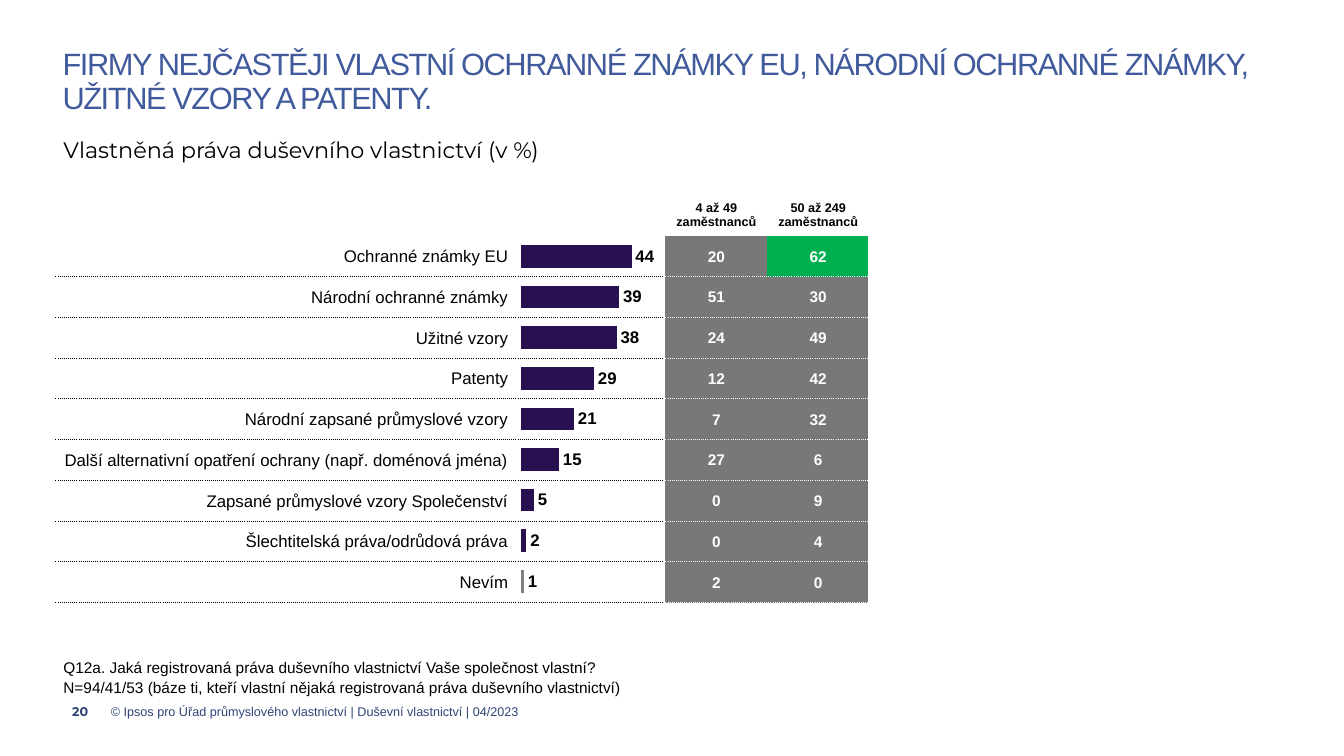
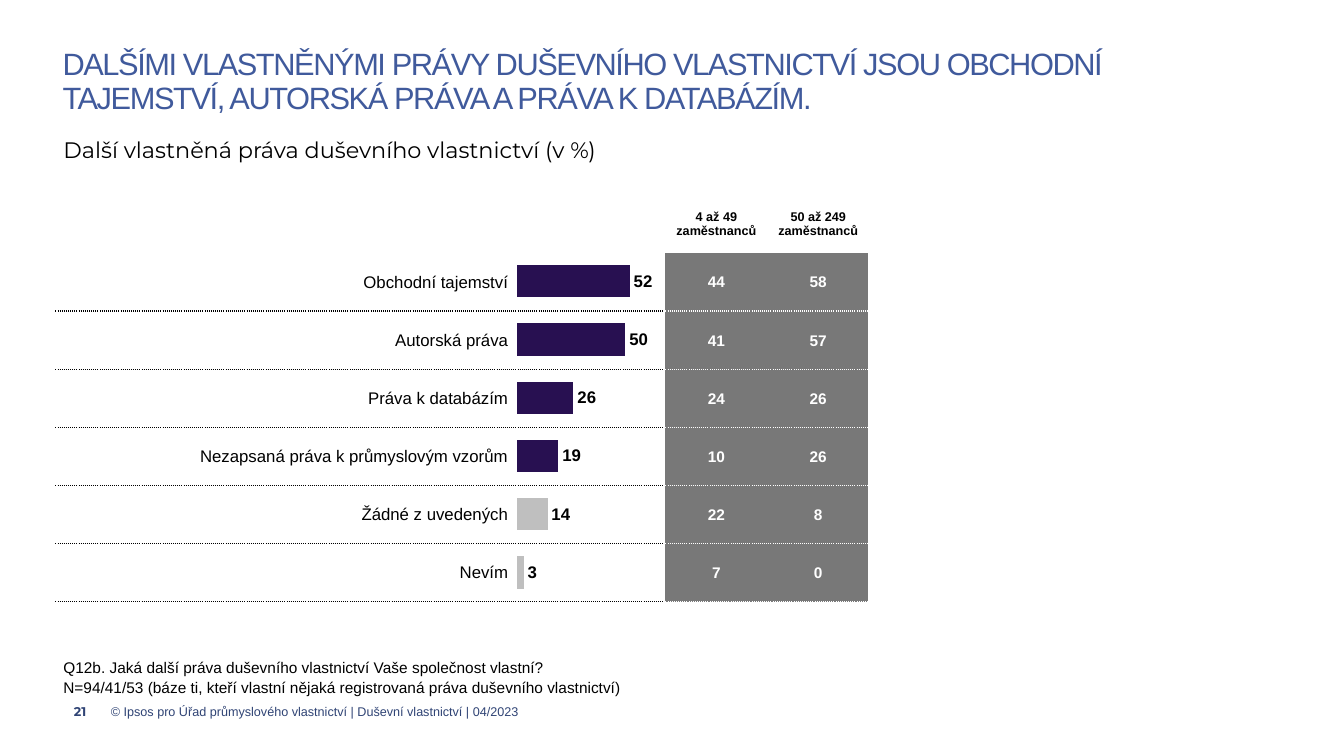
from lxml.etree import SubElement
from pptx import Presentation
from pptx.chart.data import CategoryChartData
from pptx.dml.color import RGBColor
from pptx.enum.chart import XL_CHART_TYPE as CHART, XL_LABEL_POSITION as LABEL
from pptx.enum.text import MSO_ANCHOR as ANCHOR, PP_ALIGN as ALIGN
from pptx.oxml.ns import qn
from pptx.util import Emu, Pt

EMU_PER_PX = 9144
SANS, DISPLAY = "Arial", "Montserrat"
BLACK, WHITE = "000000", "FFFFFF"
TITLE_BLUE, FOOTER_BLUE = "405A9C", "304475"
BAR, CELL_GRAY, HIGHLIGHT = "281051", "787878", "00B050"
NO_TABLE_STYLE = "{2D5ABB26-0587-4C30-8999-92F81FD0307C}"
TABLE_LEFT, TABLE_TOP = 55, 192
COLUMNS = [450, 155, 101, 101]
GROUPS = ["4 až 49 zaměstnanců", "50 až 249 zaměstnanců"]
BASE = "N=94/41/53 (báze ti, kteří vlastní nějaká registrovaná práva duševního vlastnictví)"
COPYRIGHT = "© Ipsos pro Úřad průmyslového vlastnictví | Duševní vlastnictví | 04/2023"

SLIDES = [
    {
        "number": "20",
        "title": "FIRMY NEJČASTĚJI VLASTNÍ OCHRANNÉ ZNÁMKY EU, NÁRODNÍ OCHRANNÉ ZNÁMKY, "
                 "UŽITNÉ VZORY A PATENTY.",
        "subtitle": "Vlastněná práva duševního vlastnictví (v %)",
        "question": "Q12a. Jaká registrovaná práva duševního vlastnictví Vaše společnost vlastní?",
        "rows": [
            ("Ochranné známky EU", 44, 20, 62),
            ("Národní ochranné známky", 39, 51, 30),
            ("Užitné vzory", 38, 24, 49),
            ("Patenty", 29, 12, 42),
            ("Národní zapsané průmyslové vzory", 21, 7, 32),
            ("Další alternativní opatření ochrany (např. doménová jména)", 15, 27, 6),
            ("Zapsané průmyslové vzory Společenství", 5, 0, 9),
            ("Šlechtitelská práva/odrůdová práva", 2, 0, 4),
            ("Nevím", 1, 2, 0),
        ],
        "header_h": 42,
        "body_h": 364,
        "highlights": {(0, 1)},
        "chart_box": (486, 184, 267, 413),
        "point_colors": {8: "808080"},
    },
    {
        "number": "21",
        "title": "DALŠÍMI VLASTNĚNÝMI PRÁVY DUŠEVNÍHO VLASTNICTVÍ JSOU OBCHODNÍ TAJEMSTVÍ, "
                 "AUTORSKÁ PRÁVA A PRÁVA K DATABÁZÍM.",
        "subtitle": "Další vlastněná práva duševního vlastnictví (v %)",
        "question": "Q12b. Jaká další práva duševního vlastnictví Vaše společnost vlastní?",
        "rows": [
            ("Obchodní tajemství", 52, 44, 58),
            ("Autorská práva", 50, 41, 57),
            ("Práva k databázím", 26, 24, 26),
            ("Nezapsaná práva k průmyslovým vzorům", 19, 10, 26),
            ("Žádné z uvedených", 14, 22, 8),
            ("Nevím", 3, 7, 0),
        ],
        "header_h": 59,
        "body_h": 346,
        "highlights": set(),
        "chart_box": (486, 202, 231, 395),
        "point_colors": {4: "BFBFBF", 5: "BFBFBF"},
    },
]


def px(n):
    return Emu(n * EMU_PER_PX)


def rgb(value):
    return RGBColor.from_string(value)


def style_font(font, size, color=BLACK, bold=False, name=SANS):
    font.name, font.size, font.bold = name, Pt(size), bold
    font.color.rgb = rgb(color)


def add_run(p, text, size, **style):
    r = p.add_run()
    r.text = text
    style_font(r.font, size, **style)
    return r


def set_insets(target, left, top, right, bottom):
    target.margin_left, target.margin_top = px(left), px(top)
    target.margin_right, target.margin_bottom = px(right), px(bottom)


def add_title(s, text):
    sp = s.shapes.title
    sp.left, sp.top, sp.width, sp.height = map(px, (44, 44, 1226, 77))
    tf = sp.text_frame
    tf.word_wrap = True
    tf.vertical_anchor = ANCHOR.TOP
    set_insets(tf, 18, 5, 18, 5)
    p = tf.paragraphs[0]
    p.alignment, p.line_spacing = ALIGN.LEFT, 0.9
    r = add_run(p, text, 22, color=TITLE_BLUE)
    r.font._element.set("spc", "-100")


def add_text(s, box, lines, size, insets, anchor=ANCHOR.TOP, align=ALIGN.LEFT,
             spacing=None, **style):
    tf = s.shapes.add_textbox(*map(px, box)).text_frame
    tf.word_wrap = True
    tf.vertical_anchor = anchor
    set_insets(tf, *insets)
    for i, line in enumerate(lines):
        p = tf.add_paragraph() if i else tf.paragraphs[0]
        p.alignment, p.line_spacing = align, spacing
        add_run(p, line, size, **style)


def add_border(cell, side, color, width, dash="solid"):
    ln = SubElement(cell._tc.get_or_add_tcPr(), qn(f"a:{side}"), w=str(Pt(width)))
    fill = SubElement(ln, qn("a:solidFill"))
    SubElement(fill, qn("a:srgbClr"), val=color)
    SubElement(ln, qn("a:prstDash"), val=dash)


def fill_cell(cell, text, size, align, fill=None, line=None, last=False, **style):
    cell.vertical_anchor = ANCHOR.MIDDLE
    set_insets(cell, 1, 1, 1, 0)
    if last:
        add_border(cell, "lnR", WHITE, 2.25)
    if line:
        add_border(cell, "lnB", line, 1, "sysDot")
    if fill:
        cell.fill.solid()
        cell.fill.fore_color.rgb = rgb(fill)
    else:
        cell.fill.background()
    p = cell.text_frame.paragraphs[0]
    p.alignment = align
    if text:
        add_run(p, text, size, **style)


def add_rights_table(s, rows, header_h, body_h, highlights):
    frame = s.shapes.add_table(len(rows) + 1, len(COLUMNS), px(TABLE_LEFT), px(TABLE_TOP),
                               px(sum(COLUMNS)), px(header_h + body_h))
    table = frame.table
    table.first_row = table.horz_banding = False
    for style_id in frame.element.iter(qn("a:tableStyleId")):
        style_id.text = NO_TABLE_STYLE
    for column, width in zip(table.columns, COLUMNS):
        column.width = px(width)
    for i, row in enumerate(table.rows):
        row.height = px(body_h) // len(rows) if i else px(header_h)

    for c, text in enumerate(["", ""] + GROUPS):
        fill_cell(table.cell(0, c), text, 9, ALIGN.CENTER, last=c == 3, bold=True)
    for i, (label, _, *shares) in enumerate(rows):
        fill_cell(table.cell(i + 1, 0), label, 12, ALIGN.RIGHT, line=BLACK)
        fill_cell(table.cell(i + 1, 1), "", 12, ALIGN.RIGHT, line=BLACK)
        for j, share in enumerate(shares):
            fill = HIGHLIGHT if (i, j) in highlights else CELL_GRAY
            fill_cell(table.cell(i + 1, j + 2), str(share), 11, ALIGN.CENTER, fill=fill,
                      line=WHITE, last=j == 1, color=WHITE, bold=True)


def set_plot_layout(chart, x, y, w, h):
    area = chart._chartSpace.chart.plotArea
    for old in area.findall(qn("c:layout")):
        area.remove(old)
    layout = SubElement(area, qn("c:layout"))
    area.insert(0, layout)
    manual = SubElement(layout, qn("c:manualLayout"))
    settings = [("layoutTarget", "inner"), ("xMode", "edge"), ("yMode", "edge"),
                ("x", x), ("y", y), ("w", w), ("h", h)]
    for tag, value in settings:
        SubElement(manual, qn(f"c:{tag}"), val=str(value))


def add_bar_chart(s, box, values, point_colors):
    data = CategoryChartData()
    data.categories = [str(i + 1) for i in range(len(values))]
    data.add_series("Series 1", values)
    chart = s.shapes.add_chart(CHART.BAR_CLUSTERED, *map(px, box), data).chart
    chart.has_title = chart.has_legend = False
    style_font(chart.font, 11)
    set_plot_layout(chart, 0.117, 0.122, 0.883, 0.878)

    categories, scale = chart.category_axis, chart.value_axis
    categories.reverse_order = True
    scale.minimum_scale, scale.maximum_scale, scale.major_unit = 0, 95, 20
    for axis in (categories, scale):
        axis.has_major_gridlines = False
        axis.visible = False

    plot = chart.plots[0]
    plot.gap_width = 80
    plot.vary_by_categories = False
    series = plot.series[0]
    series.invert_if_negative = False
    fills = [(series, BAR)] + [(series.points[i], c) for i, c in point_colors.items()]
    for target, color in fills:
        target.format.fill.solid()
        target.format.fill.fore_color.rgb = rgb(color)

    labels = series.data_labels
    labels.show_value = True
    labels.number_format, labels.number_format_is_linked = "#,##0", False
    labels.position = LABEL.OUTSIDE_END
    style_font(labels.font, 12, bold=True)


def add_footer(s, number):
    insets = (0, 5, 0, 5)
    add_text(s, (63, 686, 33, 40), [number], 9, insets, ANCHOR.MIDDLE, ALIGN.CENTER,
             name=DISPLAY, color=FOOTER_BLUE, bold=True)
    add_text(s, (110, 686, 1007, 40), [COPYRIGHT], 9, insets, ANCHOR.MIDDLE,
             color=FOOTER_BLUE)


def add_survey_slide(prs, content):
    s = prs.slides.add_slide(prs.slide_layouts.get_by_name("Title Only"))
    rows = content["rows"]
    add_title(s, content["title"])
    add_text(s, (63, 142, 1144, 21), [content["subtitle"]], 16, (0, 0, 0, 0),
             spacing=Pt(14), name=DISPLAY)
    add_rights_table(s, rows, content["header_h"], content["body_h"], content["highlights"])
    add_bar_chart(s, content["chart_box"], [row[1] for row in rows], content["point_colors"])
    add_text(s, (53, 647, 1136, 48), [content["question"], BASE], 11, (10, 5, 10, 5),
             spacing=Pt(14))
    add_footer(s, content["number"])


def main():
    prs = Presentation()
    prs.slide_width, prs.slide_height = px(1333), px(750)
    for content in SLIDES:
        add_survey_slide(prs, content)
    prs.save("out.pptx")


if __name__ == "__main__":
    main()
